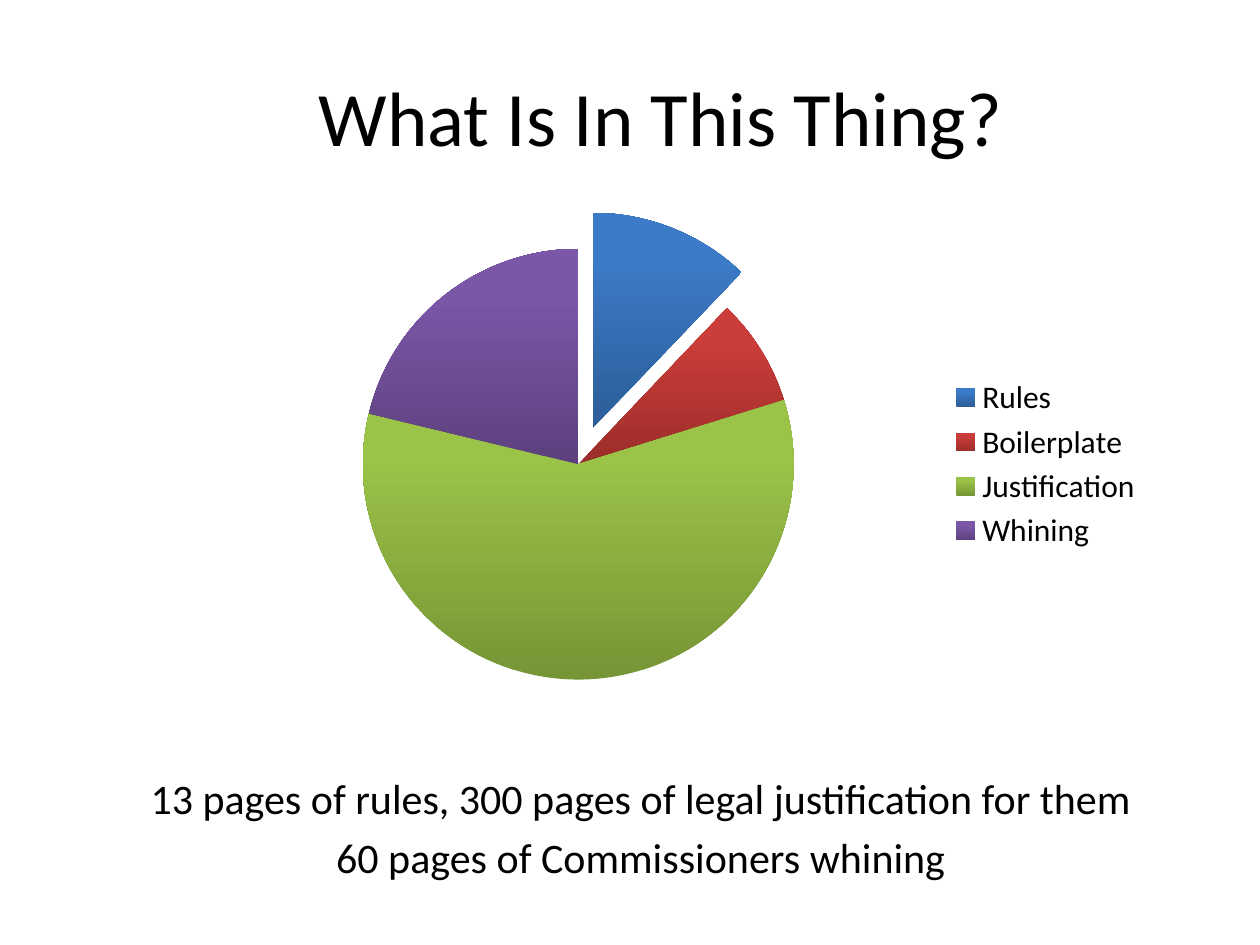
from pptx import Presentation
from pptx.chart.data import CategoryChartData
from pptx.dml.color import RGBColor
from pptx.enum.chart import XL_CHART_TYPE, XL_LEGEND_POSITION
from pptx.enum.text import MSO_ANCHOR, MSO_AUTO_SIZE, PP_ALIGN
from pptx.oxml.ns import qn
from pptx.util import Inches, Pt

PIE = XL_CHART_TYPE.PIE
LEGEND_RIGHT = XL_LEGEND_POSITION.RIGHT
MIDDLE, TOP = MSO_ANCHOR.MIDDLE, MSO_ANCHOR.TOP
NO_AUTOFIT = MSO_AUTO_SIZE.NONE
CENTER = PP_ALIGN.CENTER
FONT, INK = "Calibri", "000000"

# Share of the document, then the shade at the bottom and top of the slice
SECTIONS = {
    "Rules": (12, "2C5D98", "3C7BC7"),
    "Boilerplate": (8, "9B2D2A", "CB3D3A"),
    "Justification": (58, "769535", "9BC348"),
    "Whining": (21, "5D417E", "7B57A8"),
}
PAGE_COUNTS = [
    "13 pages of rules, 300 pages of legal justification for them",
    "60 pages of Commissioners whining",
]


def color(hex_code):
    return RGBColor.from_string(hex_code)


def style_font(font, size):
    font.name = FONT
    font.size = Pt(size)
    font.color.rgb = color(INK)


def fill_placeholder(placeholder, box, lines, size, anchor):
    """Move a placeholder to box and set centred lines without bullets."""
    placeholder.left, placeholder.top, placeholder.width, placeholder.height = box
    frame = placeholder.text_frame
    frame.text = "\n".join(lines)
    frame.word_wrap = True
    frame.auto_size = NO_AUTOFIT
    frame.vertical_anchor = anchor
    for index, paragraph in enumerate(frame.paragraphs):
        properties = paragraph._p.get_or_add_pPr()
        properties.set("marL", "0")
        properties.set("indent", "0")
        properties.append(properties.makeelement(qn("a:buNone"), {}))
        paragraph.alignment = CENTER
        paragraph.space_before = Pt(0.2 * size if index else 0)
        style_font(paragraph.font, size)


def shade_slice(fill, bottom, top):
    fill.gradient()
    fill.gradient_angle = 90
    for stop, position, shade in zip(fill.gradient_stops, (0, 0.8), (bottom, top)):
        stop.position = position
        stop.color.rgb = color(shade)


def add_sections_pie(slide, box):
    shares = CategoryChartData()
    shares.categories = list(SECTIONS)
    shares.add_series("Series 1", [share for share, _, _ in SECTIONS.values()])
    chart = slide.shapes.add_chart(PIE, *box, shares).chart
    style_font(chart.font, 18)
    chart.has_title = False
    chart.has_legend = True
    chart.legend.position = LEGEND_RIGHT
    chart.legend.include_in_layout = False

    plot = chart.plots[0]
    plot.vary_by_categories = True
    points = plot.series[0].points
    for index, (_, bottom, top) in enumerate(SECTIONS.values()):
        shade_slice(points[index].format.fill, bottom, top)

    # Pull the rules slice out of the pie
    rules = plot.series[0]._element.find(qn("c:dPt"))
    explosion = rules.makeelement(qn("c:explosion"), {"val": "18"})
    rules.find(qn("c:spPr")).addprevious(explosion)


def main():
    presentation = Presentation()
    presentation.slide_width, presentation.slide_height = Inches(10), Inches(7.5)
    slide = presentation.slides.add_slide(presentation.slide_layouts[1])
    title, body = slide.placeholders
    title_box = Inches(0.83), Inches(0.29), Inches(8.83), Inches(1.25)
    body_box = Inches(0.5), Inches(6.08), Inches(9.17), Inches(0.58)
    pie_box = Inches(1.67), Inches(1.53), Inches(7.5), Inches(4.31)
    fill_placeholder(title, title_box, ["What Is In This Thing?"], 44, MIDDLE)
    fill_placeholder(body, body_box, PAGE_COUNTS, 24, TOP)
    add_sections_pie(slide, pie_box)
    presentation.save("out.pptx")


if __name__ == "__main__":
    main()
